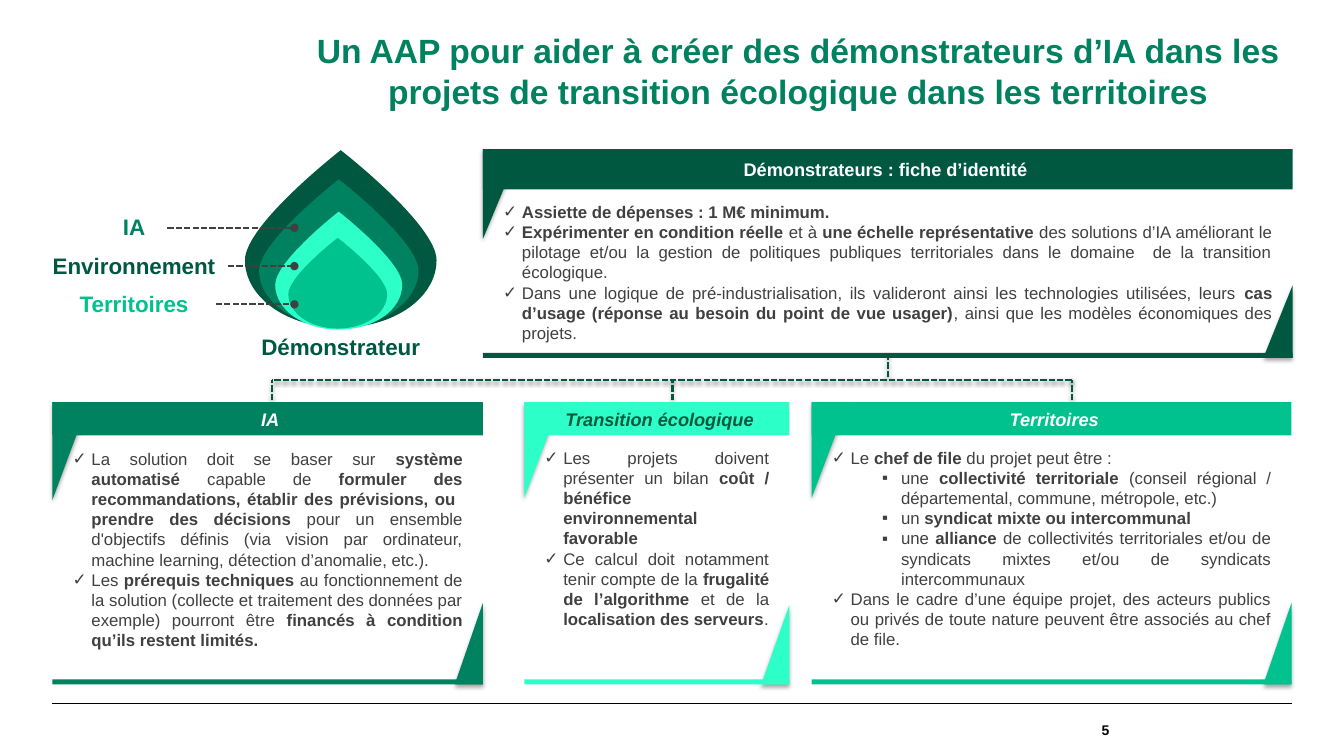
import dataclasses

import lxml.etree
import pptx
import pptx.dml.color
import pptx.enum.dml
import pptx.enum.shapes
import pptx.enum.text
import pptx.oxml.ns
import pptx.util
from pptx.util import Inches

FOREST, GREEN, MINT, AQUA = "005841", "008260", "00C28F", "2CFFC8"
GREY, WHITE, BLACK = "404040", "FFFFFF", "000000"
SHAPE = pptx.enum.shapes.MSO_SHAPE
ALIGN = pptx.enum.text.PP_ALIGN
ANCHOR = pptx.enum.text.MSO_ANCHOR


@dataclasses.dataclass
class Card:
    """Titled panel; each item is (level, text), with *...* around bold words."""
    title: str
    left: float
    width: float
    colour: str
    items: list
    top: float = 3.99
    header: float = 0.33
    bottom: float = 6.79
    text_top: float = 4.44
    stripe: tuple = (0.36, 0.95)
    corner: tuple = (0.28, 0.81)
    title_colour: str = WHITE
    title_shift: float = 0.05
    italic: bool = True


CARDS = [
    Card("Démonstrateurs : fiche d’identité", 4.79, 8.03, FOREST, [
        (0, "*Assiette de dépenses : 1 M€ minimum.*"),
        (0, "*Expérimenter en condition réelle *et à *une échelle représentative *des solutions "
            "d’IA améliorant le pilotage et/ou la gestion de politiques publiques territoriales "
            "dans le domaine  de la transition écologique."),
        (0, "Dans une logique de pré-industrialisation, ils valideront ainsi les technologies "
            "utilisées, leurs *cas d’usage (réponse au besoin du point de vue usager)*, ainsi "
            "que les modèles économiques des projets."),
    ], top=1.48, header=0.4, bottom=3.55, text_top=2, stripe=(0.37, 0.89),
        corner=(0.29, 0.72), title_shift=-0.05, italic=False),
    Card("Territoires", 8.05, 4.76, MINT, [
        (0, "Le *chef de file *du projet peut être :"),
        (1, "une *collectivité territoriale *(conseil régional / départemental, commune, "
            "métropole, etc.)"),
        (1, "un *syndicat mixte ou intercommunal*"),
        (1, "une *alliance *de collectivités territoriales et/ou de syndicats mixtes et/ou de "
            "syndicats intercommunaux"),
        (0, "Dans le cadre d’une équipe projet, des acteurs publics ou privés de toute nature "
            "peuvent être associés au chef de file."),
    ]),
    Card("Transition écologique", 5.2, 2.63, AQUA, [
        (0, "Les projets doivent présenter un bilan *coût / bénéfice environnemental favorable*"),
        (0, "Ce calcul doit notamment tenir compte de la *frugalité de l’algorithme *et de la "
            "*localisation des serveurs*."),
    ], corner=(0.28, 0.79), title_colour=FOREST),
    Card("IA", 0.52, 4.27, GREEN, [
        (0, "La solution doit se baser sur *système automatisé *capable de *formuler des "
            "recommandations, établir des prévisions, ou  prendre des décisions* pour un "
            "ensemble d'objectifs définis (via vision par ordinateur, machine learning, "
            "détection d’anomalie, etc.)."),
        (0, "Les *prérequis techniques *au fonctionnement de la solution (collecte et traitement "
            "des données par exemple) pourront être *financés à condition qu’ils restent "
            "limités.*"),
    ], text_top=4.45, stripe=(0.36, 0.97)),
]
# left, top, width, height, colour
DROPS = [(2.43, 1.49, 1.9, 1.76, FOREST), (2.57, 1.78, 1.58, 1.46, GREEN),
         (2.73, 2.1, 1.26, 1.17, AQUA), (2.86, 2.36, 0.98, 0.9, MINT)]
# Two control points and the end of each curve, as shares of the drop's size
DROP_CURVES = [((0.5, 0), (1, 0.42), (1, 0.62)), ((1, 0.83), (0.78, 1), (0.5, 1)),
               ((0.22, 1), (0, 0.83), (0, 0.62)), ((0, 0.42), (0.5, 0), (0.5, 0))]
# text, centre, top, colour
LABELS = [("IA", 1.33, 2.07, GREEN), ("Environnement", 1.33, 2.45, FOREST),
          ("Territoires", 1.33, 2.83, "00C18F"), ("Démonstrateur", 3.38, 3.26, FOREST)]


def rgb(colour):
    return pptx.dml.color.RGBColor.from_string(colour)


def add_xml(parent, tag, **attributes):
    return lxml.etree.SubElement(parent, pptx.oxml.ns.qn(tag), attributes)


def add_shadow(item, alpha, distance):
    effects = add_xml(item._element.spPr, "a:effectLst")
    shadow = add_xml(effects, "a:outerShdw", blurRad=str(pptx.util.Pt(3.1)),
                     dist=str(pptx.util.Pt(distance)), dir="5400000",
                     algn="t", rotWithShape="0")
    add_xml(add_xml(shadow, "a:srgbClr", val=BLACK), "a:alpha", val=str(alpha * 1000))


def add_run(para, text, size, colour, bold=True, italic=False):
    span = para.add_run()
    span.text = text
    span.font.name, span.font.size = "Arial", pptx.util.Pt(size)
    span.font.bold, span.font.italic = bold, italic
    span.font.color.rgb = rgb(colour)


def set_margins(frame, left, top, right, bottom):
    frame.margin_left, frame.margin_top = Inches(left), Inches(top)
    frame.margin_right, frame.margin_bottom = Inches(right), Inches(bottom)


def add_box(page, left, top, width, height, margins=(0.1, 0.05, 0.1, 0.05), wrap=True):
    box = page.shapes.add_textbox(Inches(left), Inches(top), Inches(width), Inches(height))
    box.text_frame.word_wrap = wrap
    set_margins(box.text_frame, *margins)
    return box.text_frame


def paint(shape, colour):
    shape.shadow.inherit = False
    shape.fill.solid()
    shape.fill.fore_color.rgb = rgb(colour)
    shape.line.fill.background()


def add_block(page, kind, left, top, width, height, colour, shadow=False):
    block = page.shapes.add_shape(kind, Inches(left), Inches(top), Inches(width), Inches(height))
    paint(block, colour)
    if kind != SHAPE.RECTANGLE:
        block.adjustments[0] = 1 if kind == SHAPE.ISOSCELES_TRIANGLE else 0
    if shadow:
        block._element.spPr.remove(block._element.spPr.find(pptx.oxml.ns.qn("a:effectLst")))
        add_shadow(block, 35, 1.8)
    return block


def add_line(page, start, end, colour, width=1.5, dashed=True, shadow=False, dot=False):
    line = page.shapes.add_connector(pptx.enum.shapes.MSO_CONNECTOR.STRAIGHT,
                                     *map(Inches, (*start, *end)))
    line.line.color.rgb = rgb(colour)
    line.line.width = pptx.util.Pt(width)
    if dashed:
        line.line.dash_style = pptx.enum.dml.MSO_LINE.SQUARE_DOT
    if dot:
        add_xml(line.line._get_or_add_ln(), "a:tailEnd", type="oval")
    if shadow:
        add_shadow(line, 38, 1.6)
    else:
        add_xml(line._element.spPr, "a:effectLst")


def add_bullet(para, level):
    hang = pptx.util.Pt(13.5)
    properties = para._p.get_or_add_pPr()
    properties.set("marL", str(hang + Inches(level / 2)))
    properties.set("indent", str(-hang))
    add_xml(add_xml(properties, "a:buClr"), "a:srgbClr", val=GREY)
    add_xml(properties, "a:buFont", typeface="Arial")
    add_xml(properties, "a:buChar", char="✓▪"[level])
    para.level = level
    para.alignment = ALIGN.JUSTIFY


def add_card(page, card):
    frame = add_box(page, card.left, card.text_top, card.width,
                    card.bottom - card.text_top, (0.2, 0, 0.2, 0))
    for index, (level, text) in enumerate(card.items):
        para = frame.add_paragraph() if index else frame.paragraphs[0]
        add_bullet(para, level)
        for part, words in enumerate(text.split("*")):
            if words:
                add_run(para, words, 12, GREY, bold=part % 2 == 1)
    add_block(page, SHAPE.DIAGONAL_STRIPE, card.left, card.top, *card.stripe, card.colour, True)
    header = add_block(page, SHAPE.RECTANGLE, card.left, card.top, card.width, card.header,
                       card.colour)
    set_margins(header.text_frame, 0.1 + card.title_shift, 0.05, 0.1, 0.05)
    header.text_frame.vertical_anchor = ANCHOR.MIDDLE
    para = header.text_frame.paragraphs[0]
    para.alignment = ALIGN.CENTER
    add_run(para, card.title, 13, card.title_colour, italic=card.italic)
    width, height = card.corner
    add_block(page, SHAPE.ISOSCELES_TRIANGLE, card.left + card.width - width,
              card.bottom - height, width, height, card.colour, True)
    add_block(page, SHAPE.RECTANGLE, card.left, card.bottom - 0.05, card.width, 0.05, card.colour)


def add_drop(group, left, top, width, height, colour):
    """Outline the drop's four corners, then bend each side into a curve."""
    builder = group.shapes.build_freeform(Inches(left + width / 2), Inches(top))
    builder.add_line_segments([(Inches(left + x * width), Inches(top + y * height))
                               for _, _, (x, y) in DROP_CURVES], close=True)
    drop = builder.convert_to_shape()
    paint(drop, colour)
    outline = next(drop._element.iter(pptx.oxml.ns.qn("a:path")))
    for straight in outline.findall(pptx.oxml.ns.qn("a:lnTo")):
        outline.remove(straight)
    close = outline.find(pptx.oxml.ns.qn("a:close"))
    for points in DROP_CURVES:
        curve = add_xml(outline, "a:cubicBezTo")
        for x, y in points:
            add_xml(curve, "a:pt", x=str(int(x * drop.width)), y=str(int(y * drop.height)))
    outline.append(close)


def add_title(page, text):
    title = page.shapes.title
    title.left, title.top, title.width, title.height = map(Inches, (2.59, 0.3, 10.65, 0.4))
    frame = title.text_frame
    frame.word_wrap, frame.auto_size = True, pptx.enum.text.MSO_AUTO_SIZE.NONE
    frame.vertical_anchor = ANCHOR.TOP
    set_margins(frame, 0, 0, 0, 0)
    frame.paragraphs[0].alignment = ALIGN.CENTER
    add_run(frame.paragraphs[0], text, 24, GREEN)


def main():
    deck = pptx.Presentation()
    deck.slide_width, deck.slide_height = Inches(13.33), Inches(7.5)
    page = deck.slides.add_slide(deck.slide_layouts[5])
    add_title(page, "Un AAP pour aider à créer des démonstrateurs d’IA dans les projets "
                    "de transition écologique dans les territoires")
    add_line(page, (0.52, 6.98), (12.81, 6.98), BLACK, 0.8, dashed=False)
    drops = page.shapes.add_group_shape()
    for drop in DROPS:
        add_drop(drops, *drop)
    for text, centre, top, colour in LABELS:
        para = add_box(page, centre - 1, top, 2, 0.36, wrap=False).paragraphs[0]
        para.alignment = ALIGN.CENTER
        add_run(para, text, 16, colour)
    for row, start in enumerate((1.66, 2.26, 2.14)):
        y = 2.26 + row * 0.38
        add_line(page, (start, y), (2.92, y), GREY, dot=True)
    add_line(page, (8.81, 3.74), (8.81, 3.51), FOREST, shadow=True)
    add_line(page, (10.63, 3.77), (2.7, 3.77), FOREST, shadow=True)
    for x in (2.7, 6.67, 10.63):
        add_line(page, (x, 3.97), (x, 3.77), FOREST, shadow=True)
    for card in CARDS:
        add_card(page, card)
    number = add_box(page, 9.13, 6.98, 1.97, 0.52)
    number.vertical_anchor = ANCHOR.MIDDLE
    number.paragraphs[0].alignment = ALIGN.RIGHT
    add_run(number.paragraphs[0], "5", 10, BLACK)
    deck.save("out.pptx")


if __name__ == "__main__":
    main()
